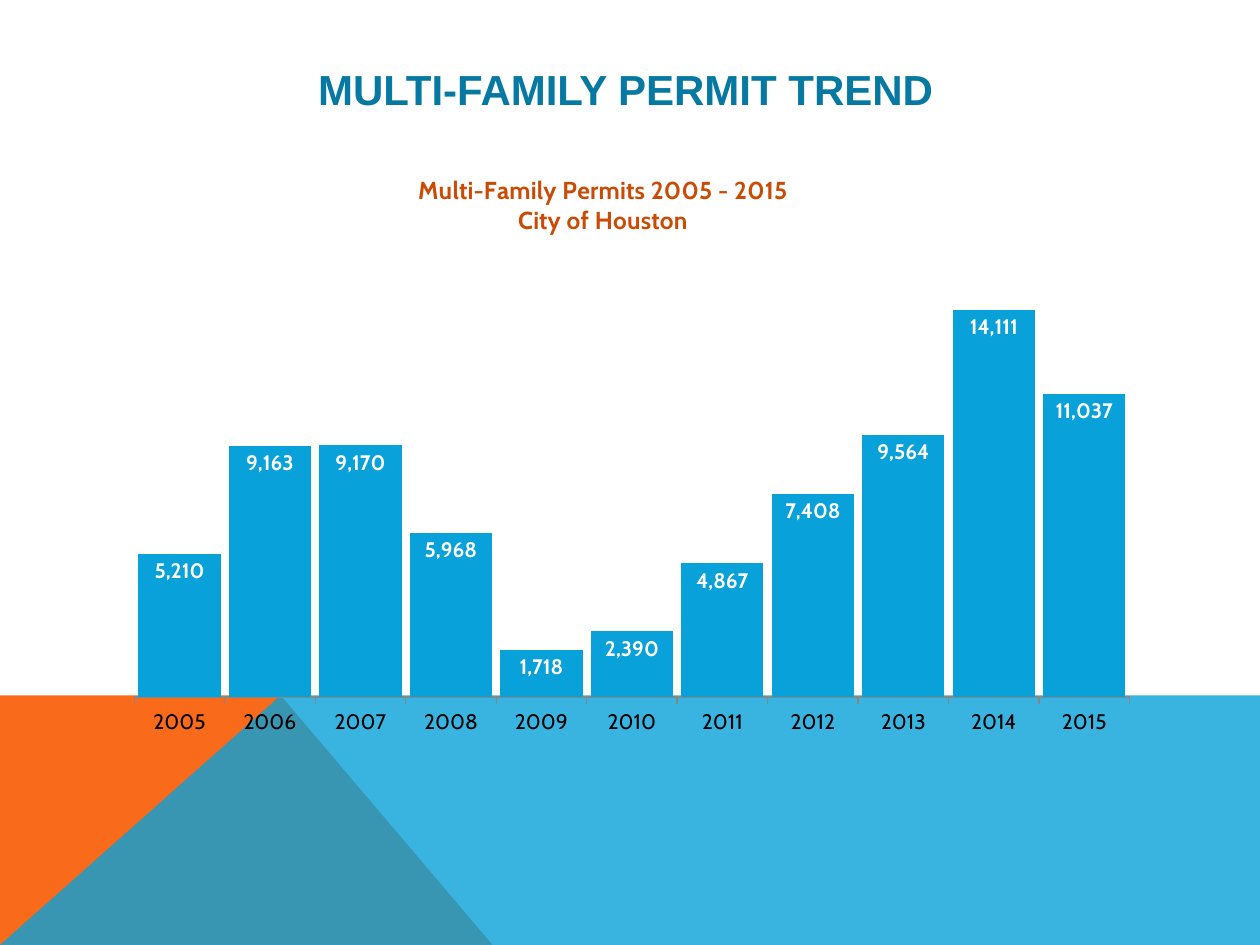
from dataclasses import dataclass

from lxml import etree
from pptx import Presentation
from pptx.chart.data import CategoryChartData
from pptx.dml.color import RGBColor
from pptx.enum import chart as charts, text
from pptx.oxml import ns
from pptx.util import Cm, Pt


@dataclass(frozen=True)
class Theme:
    orange: str = "F96A1B"
    blue: str = "08A1D9"
    heading: str = "0679A3"
    chart_title: str = "CA4B05"
    axis: str = "868686"
    white: str = "FFFFFF"
    black: str = "000000"
    heading_font: str = "Arial"
    chart_font: str = "Cabin"
    heading_size: int = 24
    chart_title_size: int = 14
    label_size: int = 12


@dataclass(frozen=True)
class Panel:
    points: tuple[tuple[float, float], ...]  # corners in cm
    color: str
    alpha: int = 100  # opacity in percent


THEME = Theme()
WIDTH, HEIGHT = 25.4, 19.05
HORIZON = 14.02
PEAK = 5.66

PANELS = (
    Panel(((0, HEIGHT), (0, HORIZON), (PEAK, HORIZON), (9.93, HEIGHT)), THEME.orange),
    Panel(((0, HEIGHT), (PEAK, HORIZON), (WIDTH, HORIZON), (WIDTH, HEIGHT)), THEME.blue, 80),
)
PERMITS = (5210, 9163, 9170, 5968, 1718, 2390, 4867, 7408, 9564, 14111, 11037)
FIRST_YEAR = 2005


def rgb(color: str) -> RGBColor:
    return RGBColor.from_string(color)


def style_font(font, name: str, size: int, color: str, bold: bool = False) -> None:
    font.name, font.size, font.bold = name, Pt(size), bold
    font.color.rgb = rgb(color)


def draw_panel(slide, panel: Panel) -> None:
    start, *others = [(Cm(x), Cm(y)) for x, y in panel.points]
    builder = slide.shapes.build_freeform(*start)
    builder.add_line_segments(others, close=True)
    shape = builder.convert_to_shape()
    shape.shadow.inherit = False
    shape.line.fill.background()
    shape.fill.solid()
    shape.fill.fore_color.rgb = rgb(panel.color)
    if panel.alpha < 100:
        color = shape.fill._xPr.find(f".//{ns.qn('a:srgbClr')}")
        etree.SubElement(color, ns.qn("a:alpha"), val=str(panel.alpha * 1000))


def draw_heading(slide, words: str) -> None:
    frame = slide.shapes.add_textbox(Cm(2.29), Cm(1.02), Cm(20.88), Cm(1.52)).text_frame
    frame.word_wrap = True
    frame.vertical_anchor = text.MSO_ANCHOR.MIDDLE
    paragraph = frame.paragraphs[0]
    paragraph.text = words
    paragraph.alignment = text.PP_ALIGN.CENTER
    style_font(paragraph.font, THEME.heading_font, THEME.heading_size, THEME.heading, True)


def set_layout(element, inner: bool = False, **fractions: float) -> None:
    """Place a chart part by fractions of the chart's size."""
    layout = element.find(ns.qn("c:layout"))
    if layout is None:
        layout = etree.Element(ns.qn("c:layout"))
        before = element.find(ns.qn("c:tx"))
        element.insert(0 if before is None else element.index(before) + 1, layout)
    manual = etree.SubElement(layout, ns.qn("c:manualLayout"))
    settings = {"layoutTarget": "inner"} if inner else {}
    settings |= {"xMode": "edge", "yMode": "edge"}
    settings |= {key: str(value) for key, value in fractions.items()}
    for key, value in settings.items():
        etree.SubElement(manual, ns.qn(f"c:{key}"), val=value)


def draw_permit_chart(slide) -> None:
    data = CategoryChartData(number_format="#,##0")
    data.categories = [str(FIRST_YEAR + i) for i in range(len(PERMITS))]
    data.add_series("Series 1", PERMITS)
    chart = slide.shapes.add_chart(
        charts.XL_CHART_TYPE.COLUMN_CLUSTERED, Cm(2.29), Cm(3.05), Cm(20.9), Cm(11.96), data
    ).chart
    chart.has_legend = False
    style_font(chart.font, THEME.chart_font, 10, THEME.black)

    # Chart title
    title = chart.chart_title
    title.text_frame.text = "Multi-Family Permits 2005 - 2015\nCity of Houston"
    for paragraph in title.text_frame.paragraphs:
        style_font(paragraph.font, THEME.chart_font, THEME.chart_title_size, THEME.chart_title, True)
    title.include_in_layout = False
    set_layout(title._element, x=0.29, y=0.03)

    # Axes
    years, values = chart.category_axis, chart.value_axis
    years.major_tick_mark = charts.XL_TICK_MARK.OUTSIDE
    years.format.line.color.rgb = rgb(THEME.axis)
    style_font(years.tick_labels.font, THEME.chart_font, THEME.label_size, THEME.black)
    values.visible = False
    values.has_major_gridlines = False
    values.minimum_scale, values.maximum_scale, values.major_unit = 0, 16000, 2000

    # Columns and their labels
    plot = chart.plots[0]
    plot.gap_width = 10
    plot.vary_by_categories = False
    fill = plot.series[0].format.fill
    fill.solid()
    fill.fore_color.rgb = rgb(THEME.blue)
    plot.has_data_labels = True
    labels = plot.data_labels
    labels.show_value = True
    labels.number_format, labels.number_format_is_linked = "#,##0", False
    labels.position = charts.XL_LABEL_POSITION.INSIDE_END
    style_font(labels.font, THEME.chart_font, THEME.label_size, THEME.white, True)
    plot_area = chart._chartSpace.chart.plotArea
    set_layout(plot_area, inner=True, x=0.02, y=0.18, w=0.96, h=0.74)


def main() -> None:
    presentation = Presentation()
    presentation.slide_width, presentation.slide_height = Cm(WIDTH), Cm(HEIGHT)
    slide = presentation.slides.add_slide(presentation.slide_layouts[6])
    for panel in PANELS:
        draw_panel(slide, panel)
    draw_heading(slide, "MULTI-FAMILY PERMIT TREND ")
    draw_permit_chart(slide)
    presentation.save("out.pptx")


if __name__ == "__main__":
    main()
